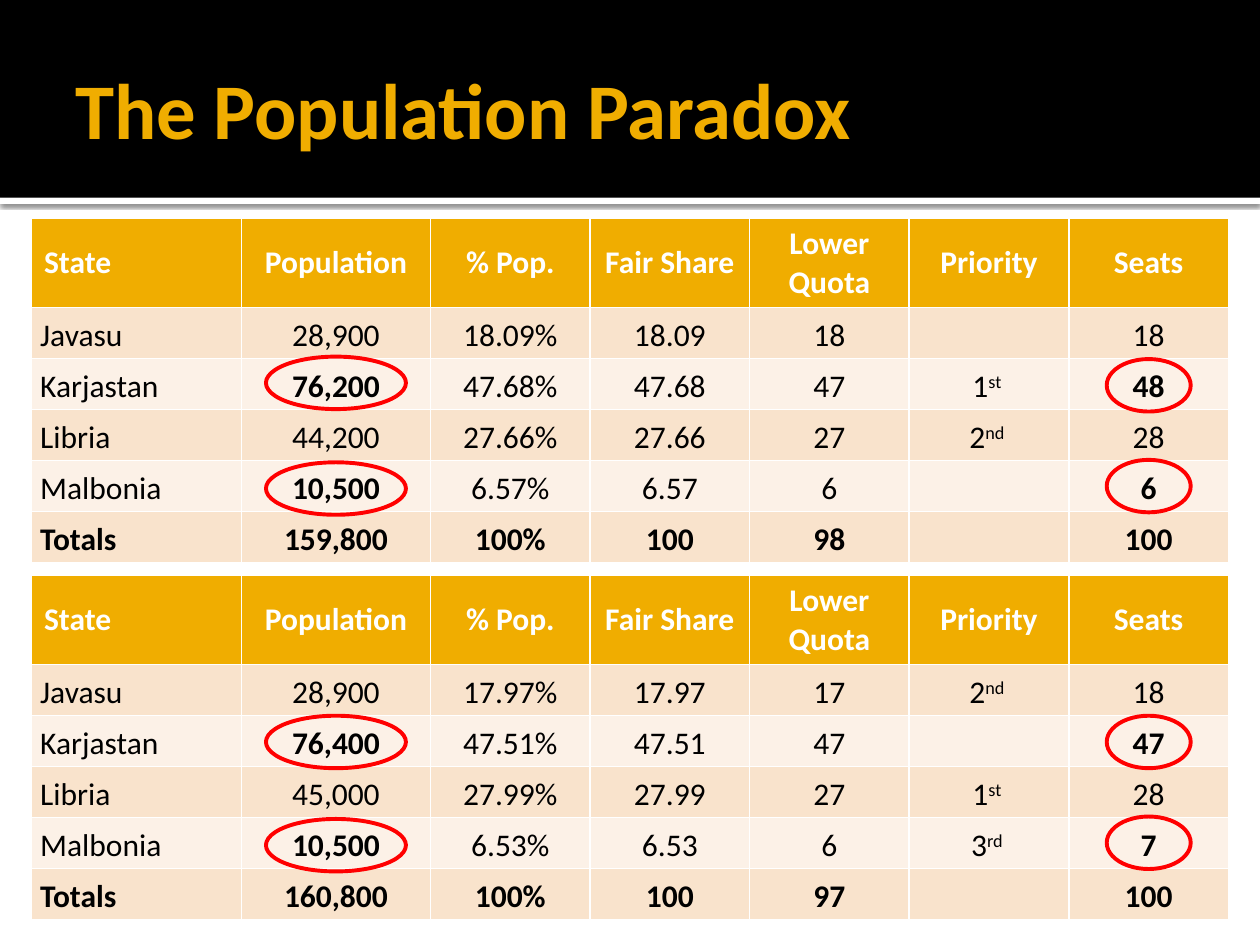
import lxml.etree
import pptx
import pptx.dml.color
import pptx.enum.shapes
import pptx.enum.text
import pptx.oxml
import pptx.oxml.ns
import pptx.util

Pt = pptx.util.Pt
RGBColor = pptx.dml.color.RGBColor
ALIGN = pptx.enum.text.PP_ALIGN
MIDDLE = pptx.enum.text.MSO_ANCHOR.MIDDLE
SHAPE = pptx.enum.shapes.MSO_SHAPE

BLACK = RGBColor(0x00, 0x00, 0x00)
WHITE = RGBColor(0xFF, 0xFF, 0xFF)
GOLD = RGBColor(0xF0, 0xAD, 0x00)
PEACH = RGBColor(0xF9, 0xE3, 0xCC)
CREAM = RGBColor(0xFC, 0xF1, 0xE7)
RED = RGBColor(0xFF, 0x00, 0x00)

FONT = "Calibri"
TABLE_LEFT = 18
COLUMN_WIDTHS = [120, 108] + [91.2] * 5
HEADER_HEIGHT, ROW_HEIGHT = 50.8, 29.2
POPULATION, PRIORITY, SEATS = 1, 5, 6
RING_WIDTHS = {POPULATION: 80, SEATS: 48}
RING_HEIGHT = 30
RINGED_STATES = ("Karjastan", "Malbonia")

HEADER = ["State", "Population", "% Pop.", "Fair Share", "Lower Quota", "Priority", "Seats"]
BEFORE = [
    ["Javasu", "28,900", "18.09%", "18.09", "18", "", "18"],
    ["Karjastan", "76,200", "47.68%", "47.68", "47", "1st", "48"],
    ["Libria", "44,200", "27.66%", "27.66", "27", "2nd", "28"],
    ["Malbonia", "10,500", "6.57%", "6.57", "6", "", "6"],
    ["Totals", "159,800", "100%", "100", "98", "", "100"],
]
AFTER = [
    ["Javasu", "28,900", "17.97%", "17.97", "17", "2nd", "18"],
    ["Karjastan", "76,400", "47.51%", "47.51", "47", "", "47"],
    ["Libria", "45,000", "27.99%", "27.99", "27", "1st", "28"],
    ["Malbonia", "10,500", "6.53%", "6.53", "6", "3rd", "7"],
    ["Totals", "160,800", "100%", "100", "97", "", "100"],
]
RINGS = [
    (SEATS, 205.2), (SEATS, 409), (SEATS, 262.8), (SEATS, 466.6),
    (POPULATION, 203.8), (POPULATION, 264.2), (POPULATION, 409), (POPULATION, 468),
]
BAND_SHADOW = (
    f'<a:effectLst {pptx.oxml.ns.nsdecls("a")}>'
    '<a:outerShdw blurRad="31750" dist="10160" dir="5400000" algn="tl" rotWithShape="0">'
    '<a:srgbClr val="000000"><a:alpha val="60000"/></a:srgbClr>'
    '</a:outerShdw></a:effectLst>'
)


def set_font(paragraph, size, color, bold):
    """Give a paragraph its font."""
    font = paragraph.font
    font.name, font.size, font.bold = FONT, Pt(size), bold
    font.color.rgb = color


def add_band(page, top, height, color):
    """Add a full-width band without outline or shadow."""
    band = page.shapes.add_shape(SHAPE.RECTANGLE, Pt(0), Pt(top), Pt(720), Pt(height))
    band.shadow.inherit = False
    band.fill.solid()
    band.fill.fore_color.rgb = color
    band.line.fill.background()
    return band


def cast_shadow(shape):
    """Replace a shape's empty effect list with a soft shadow below it."""
    effects = shape._element.spPr.find(pptx.oxml.ns.qn("a:effectLst"))
    effects.getparent().replace(effects, pptx.oxml.parse_xml(BAND_SHADOW))


def add_title(page, text):
    """Add the slide title."""
    box = page.shapes.add_textbox(Pt(36), Pt(12.2), Pt(648), Pt(98.6))
    frame = box.text_frame
    frame.word_wrap = True
    frame.vertical_anchor = MIDDLE
    frame.margin_right = Pt(3.6)
    para = frame.paragraphs[0]
    para.text = text
    set_font(para, 45, GOLD, True)


def add_ordinal(para, ordinal):
    """Write an ordinal with a raised suffix."""
    para.add_run().text = ordinal[0]
    suffix = para.add_run()
    suffix.text = ordinal[1:] + " "
    suffix._r.get_or_add_rPr().set("baseline", "30000")


def fill_cell(cell, text, column, fill, color, bold):
    """Colour a table cell and write its text."""
    cell.fill.solid()
    cell.fill.fore_color.rgb = fill
    cell.vertical_anchor = MIDDLE
    para = cell.text_frame.paragraphs[0]
    para.alignment = ALIGN.CENTER if column else ALIGN.LEFT
    set_font(para, 18, color, bold)
    if column == PRIORITY and text[:1].isdigit():
        add_ordinal(para, text)
    elif text:
        para.add_run().text = text


def add_apportionment(page, top, records):
    """Add one apportionment table."""
    height = HEADER_HEIGHT + ROW_HEIGHT * len(records)
    frame = page.shapes.add_table(
        len(records) + 1, len(HEADER), Pt(TABLE_LEFT), Pt(top), Pt(sum(COLUMN_WIDTHS)), Pt(height))
    table = frame.table
    for column, width in enumerate(COLUMN_WIDTHS):
        table.columns[column].width = Pt(width)
        fill_cell(table.cell(0, column), HEADER[column], column, GOLD, WHITE, True)
    table.rows[0].height = Pt(HEADER_HEIGHT)
    for row, record in enumerate(records, 1):
        table.rows[row].height = Pt(ROW_HEIGHT)
        for column, text in enumerate(record):
            cell = table.cell(row, column)
            ringed = record[0] in RINGED_STATES and column in RING_WIDTHS
            fill_cell(cell, text, column, PEACH if row % 2 else CREAM, BLACK,
                      ringed or record[0] == "Totals")
            if text:
                cell.margin_left = cell.margin_right = Pt(5)
                cell.margin_top = cell.margin_bottom = Pt(0)
                cell.text_frame.paragraphs[0].line_spacing = 1.15


def add_ring(page, column, top):
    """Add a red ring centred on a table column."""
    width = RING_WIDTHS[column]
    center = TABLE_LEFT + sum(COLUMN_WIDTHS[:column]) + COLUMN_WIDTHS[column] / 2
    ring = page.shapes.add_shape(
        SHAPE.OVAL, Pt(center - width / 2), Pt(top), Pt(width), Pt(RING_HEIGHT))
    ring.shadow.inherit = False
    ring.fill.background()
    ring.line.color.rgb = RED
    ring.line.width = Pt(2.25)


def main():
    """Build the slide and save it."""
    deck = pptx.Presentation()
    deck.slide_width, deck.slide_height = Pt(720), Pt(540)
    page = deck.slides.add_slide(deck.slide_layouts[6])
    cast_shadow(add_band(page, 113, 3.6, WHITE))
    add_band(page, 0, 113, BLACK)
    add_title(page, "The Population Paradox")
    add_apportionment(page, 124.8, BEFORE)
    add_apportionment(page, 328.8, AFTER)
    for column, top in RINGS:
        add_ring(page, column, top)
    deck.save("out.pptx")


if __name__ == "__main__":
    main()
